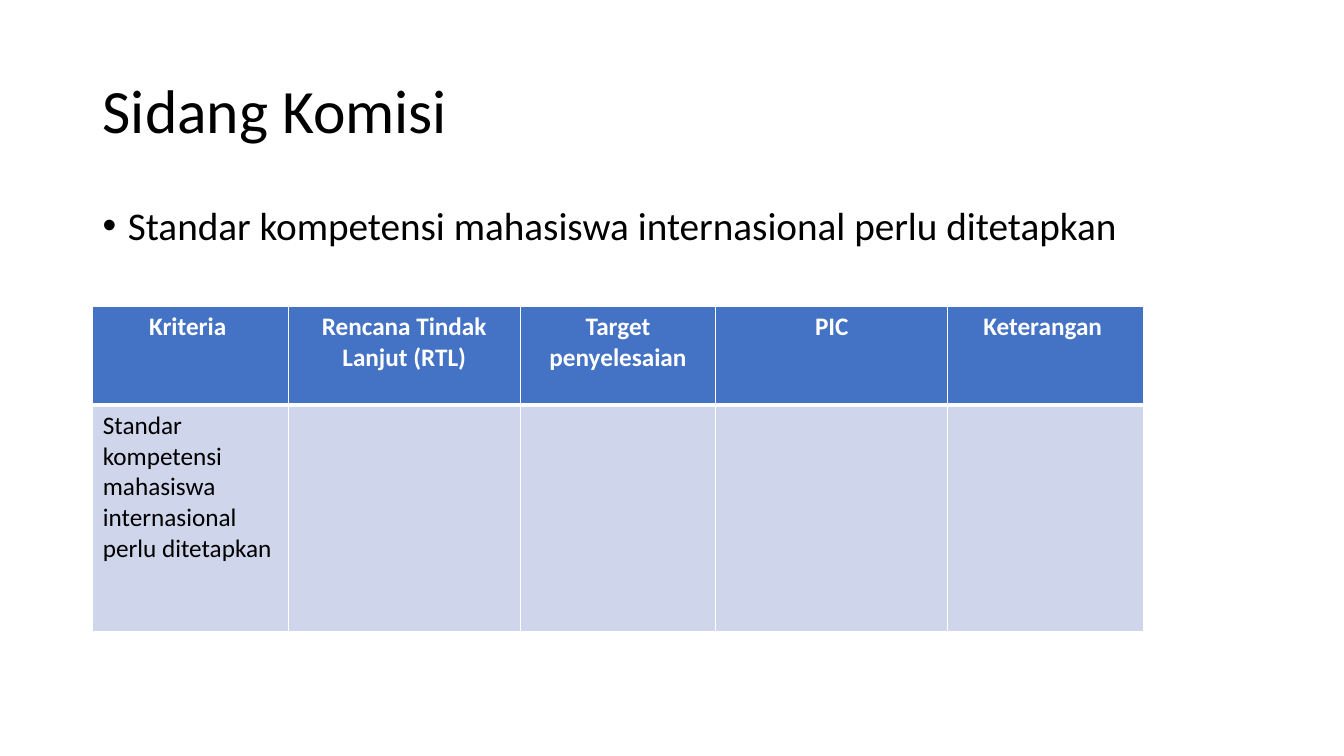
import lxml.etree
import pptx
import pptx.dml.color
import pptx.enum.text
import pptx.oxml
import pptx.oxml.ns
import pptx.util

WIDTH, HEIGHT = 13.33, 7.5
LEFT = 0.92
FONT = "Calibri"
BLACK, WHITE, HEADER_BLUE, BODY_BLUE = "000000", "FFFFFF", "4472C4", "CFD5EA"
STANDARD = "Standar kompetensi mahasiswa internasional perlu ditetapkan"
HEADINGS = ["Kriteria ", "Rencana Tindak Lanjut (RTL)", "Target penyelesaian", "PIC", "Keterangan "]
COLUMN_WIDTHS = [1.94, 2.3, 1.94, 2.3, 1.94]
ROW_HEIGHTS = [0.98, 2.25]


def color(value):
    return pptx.dml.color.RGBColor.from_string(value)


def add_run(paragraph, text, size, text_color=BLACK, bold=False):
    run = paragraph.add_run()
    run.text = text
    run.font.name = FONT
    run.font.size = pptx.util.Pt(size)
    run.font.bold = bold
    run.font.color.rgb = color(text_color)


def add_text(slide, text, top, height, size, anchor):
    box = slide.shapes.add_textbox(*map(pptx.util.Inches, (LEFT, top, 11.5, height)))
    box.text_frame.word_wrap = True
    box.text_frame.vertical_anchor = anchor
    paragraph = box.text_frame.paragraphs[0]
    paragraph.line_spacing = 0.9
    add_run(paragraph, text, size)
    return paragraph


def add_bullet(paragraph):
    paragraph.space_before = pptx.util.Pt(10)
    properties = paragraph._p.get_or_add_pPr()
    indent = pptx.util.Inches(0.25)
    properties.set("marL", str(indent))
    properties.set("indent", str(-indent))
    qualify = pptx.oxml.ns.qn
    lxml.etree.SubElement(properties, qualify("a:buFont"), typeface="Arial")
    lxml.etree.SubElement(properties, qualify("a:buChar"), char="•")


def set_borders(cell, top, bottom):
    properties = cell._tc.get_or_add_tcPr()
    for side, points in zip("LRTB", (1, 1, top, bottom)):
        properties.append(pptx.oxml.parse_xml(
            f'<a:ln{side} {pptx.oxml.ns.nsdecls("a")} w="{pptx.util.Pt(points)}">'
            f'<a:solidFill><a:srgbClr val="{WHITE}"/></a:solidFill></a:ln{side}>'))


def fill_cell(cell, text, is_header):
    set_borders(cell, 1 if is_header else 3, 3 if is_header else 1)
    cell.fill.solid()
    cell.fill.fore_color.rgb = color(HEADER_BLUE if is_header else BODY_BLUE)
    paragraph = cell.text_frame.paragraphs[0]
    if is_header:
        paragraph.alignment = pptx.enum.text.PP_ALIGN.CENTER
    if text:
        add_run(paragraph, text, 18, WHITE if is_header else BLACK, is_header)


def add_plan_table(slide):
    rows = [HEADINGS, [STANDARD] + [""] * (len(HEADINGS) - 1)]
    bounds = (LEFT, 3.04, sum(COLUMN_WIDTHS), sum(ROW_HEIGHTS))
    table = slide.shapes.add_table(
        len(rows), len(HEADINGS), *map(pptx.util.Inches, bounds)).table
    for column, width in zip(table.columns, COLUMN_WIDTHS):
        column.width = pptx.util.Inches(width)
    for row, height, texts in zip(table.rows, ROW_HEIGHTS, rows):
        row.height = pptx.util.Inches(height)
        for cell, text in zip(row.cells, texts):
            fill_cell(cell, text, texts is HEADINGS)


def main():
    presentation = pptx.Presentation()
    presentation.slide_width = pptx.util.Inches(WIDTH)
    presentation.slide_height = pptx.util.Inches(HEIGHT)
    slide = presentation.slides.add_slide(presentation.slide_layouts[6])
    anchors = pptx.enum.text.MSO_ANCHOR
    add_text(slide, "Sidang Komisi", 0.4, 1.45, 44, anchors.MIDDLE)
    add_bullet(add_text(slide, STANDARD, 2, 4.76, 28, anchors.TOP))
    add_plan_table(slide)
    presentation.save("out.pptx")


if __name__ == "__main__":
    main()
